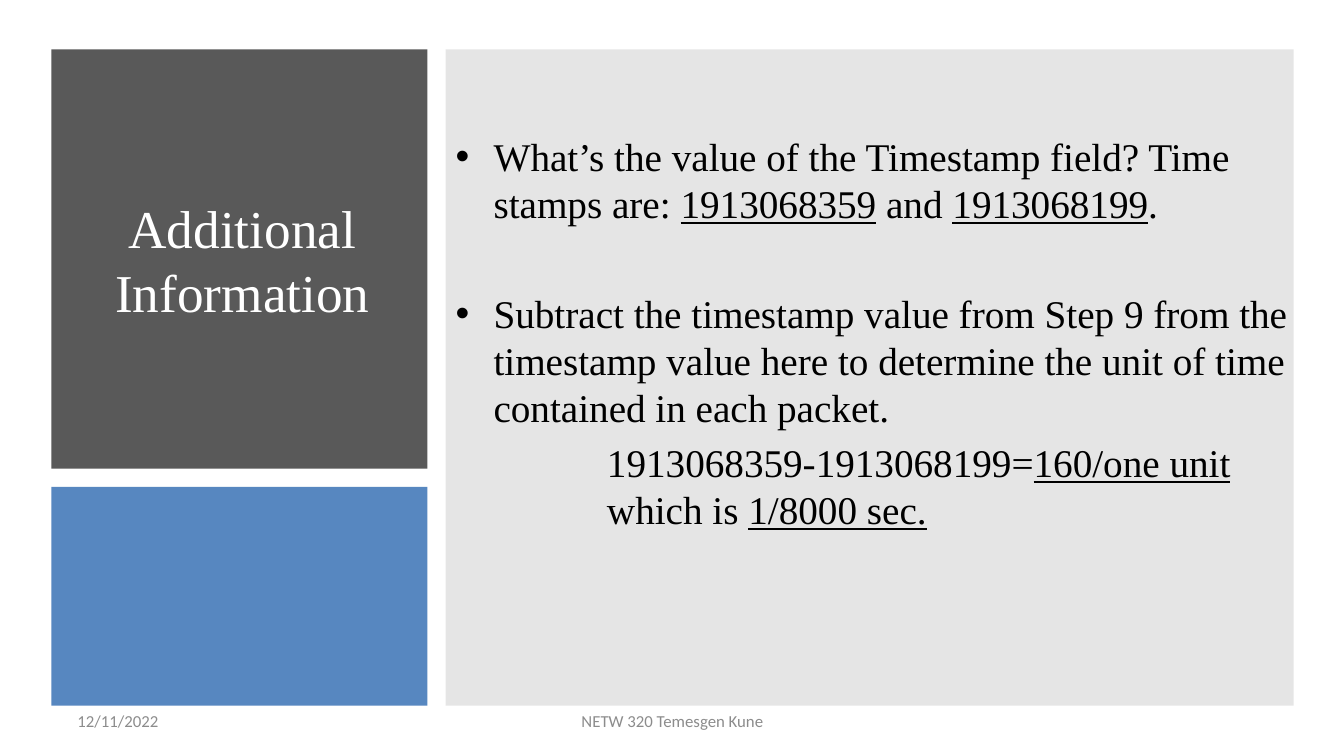
from pptx import Presentation
from pptx.dml.color import RGBColor
from pptx.enum.shapes import MSO_SHAPE
from pptx.enum.text import MSO_ANCHOR, MSO_AUTO_SIZE, PP_ALIGN
from pptx.oxml.ns import qn
from pptx.util import Inches, Pt
from lxml import etree

RECT = MSO_SHAPE.RECTANGLE
MIDDLE = MSO_ANCHOR.MIDDLE
NO_FIT = MSO_AUTO_SIZE.NONE
LEFT, CENTER = PP_ALIGN.LEFT, PP_ALIGN.CENTER

COLORS = {"dark": "595959", "blue": "4F81BD", "gray": "808080",
          "white": "FFFFFF", "black": "000000", "footer": "8C8C8C"}
SERIF, SANS = "Times New Roman", "Calibri"

# Each item: level, space before in points, runs of (text, underlined)
ITEMS = [
    (0, 5.6, [("What’s the value of the Timestamp field? Time stamps are: ", False),
              ("1913068359", True), (" and ", False),
              ("1913068199", True), (".", False)]),
    (0, 45, [("Subtract the timestamp value from Step 9 from the timestamp value "
              "here to determine the unit of time contained in each packet.", False)]),
    (3, 5.6, [("1913068359-1913068199=", False), ("160/one unit", True),
              (" which is ", False), ("1/8000 sec.", True)]),
]


def place(sp, box):
    sp.left, sp.top, sp.width, sp.height = (Inches(v) for v in box)


def setup_frame(sp):
    tf = sp.text_frame
    tf.word_wrap = True
    tf.auto_size = NO_FIT
    tf.vertical_anchor = MIDDLE
    return tf


def add_run(p, text, size, font, color, underline=False):
    r = p.add_run()
    r.text = text
    r.font.size = Pt(size)
    r.font.name = font
    r.font.color.rgb = RGBColor.from_string(COLORS[color])
    if underline:
        r.font.underline = True


def add_panel(s, box, color, opacity=100):
    """Add a plain rectangle behind the title and body."""
    sp = s.shapes.add_shape(RECT, *(Inches(v) for v in box))
    sp.shadow.inherit = False
    sp.line.fill.background()
    sp.fill.solid()
    sp.fill.fore_color.rgb = RGBColor.from_string(COLORS[color])
    if opacity < 100:
        srgb = sp._element.spPr.find(".//" + qn("a:srgbClr"))
        etree.SubElement(srgb, qn("a:alpha")).set("val", str(opacity * 1000))
    s.shapes.title._element.addprevious(sp._element)


def add_title_column(s, box):
    left, top, width, height = box
    title_height, gap = 4.16, 0.18
    lower = title_height + gap
    add_panel(s, (left, top, width, title_height), "dark")
    add_panel(s, (left, top + lower, width, height - lower), "blue", 95)
    title = s.shapes.title
    place(title, (left + 0.34, top + 0.31, 3.11, title_height - 0.62))
    p = setup_frame(title).paragraphs[0]
    p.alignment = CENTER
    add_run(p, "Additional Information", 38, SERIF, "white")


def add_body(s, box):
    left, top, width, height = box
    add_panel(s, box, "gray", 20)
    body = s.placeholders[1]
    place(body, (left, top + 0.72, width + 0.5, 4.17))
    tf = setup_frame(body)
    for i, (level, before, runs) in enumerate(ITEMS):
        p = tf.add_paragraph() if i else tf.paragraphs[0]
        p.level = level
        p.space_before = Pt(before)
        if level:
            pPr = p._p.get_or_add_pPr()
            pPr.set("marL", str(Inches(1.5)))
            pPr.set("indent", "0")
            etree.SubElement(pPr, qn("a:buNone"))
        for text, underline in runs:
            add_run(p, text, 28, SERIF, "black", underline)


def add_footer(s, box, text, align):
    sp = s.shapes.add_textbox(*(Inches(v) for v in box))
    p = setup_frame(sp).paragraphs[0]
    p.alignment = align
    add_run(p, text, 12, SANS, "footer")


def main():
    prs = Presentation()
    prs.slide_width, prs.slide_height = Inches(13.33), Inches(7.5)
    s = prs.slides.add_slide(prs.slide_layouts[1])
    add_title_column(s, (0.51, 0.49, 3.73, 6.51))
    add_body(s, (4.42, 0.49, 8.41, 6.51))
    add_footer(s, (0.67, 6.95, 3.11, 0.4), "12/11/2022", LEFT)
    add_footer(s, (4.56, 6.95, 4.22, 0.4), "NETW 320 Temesgen Kune", CENTER)
    prs.save("out.pptx")


if __name__ == "__main__":
    main()
